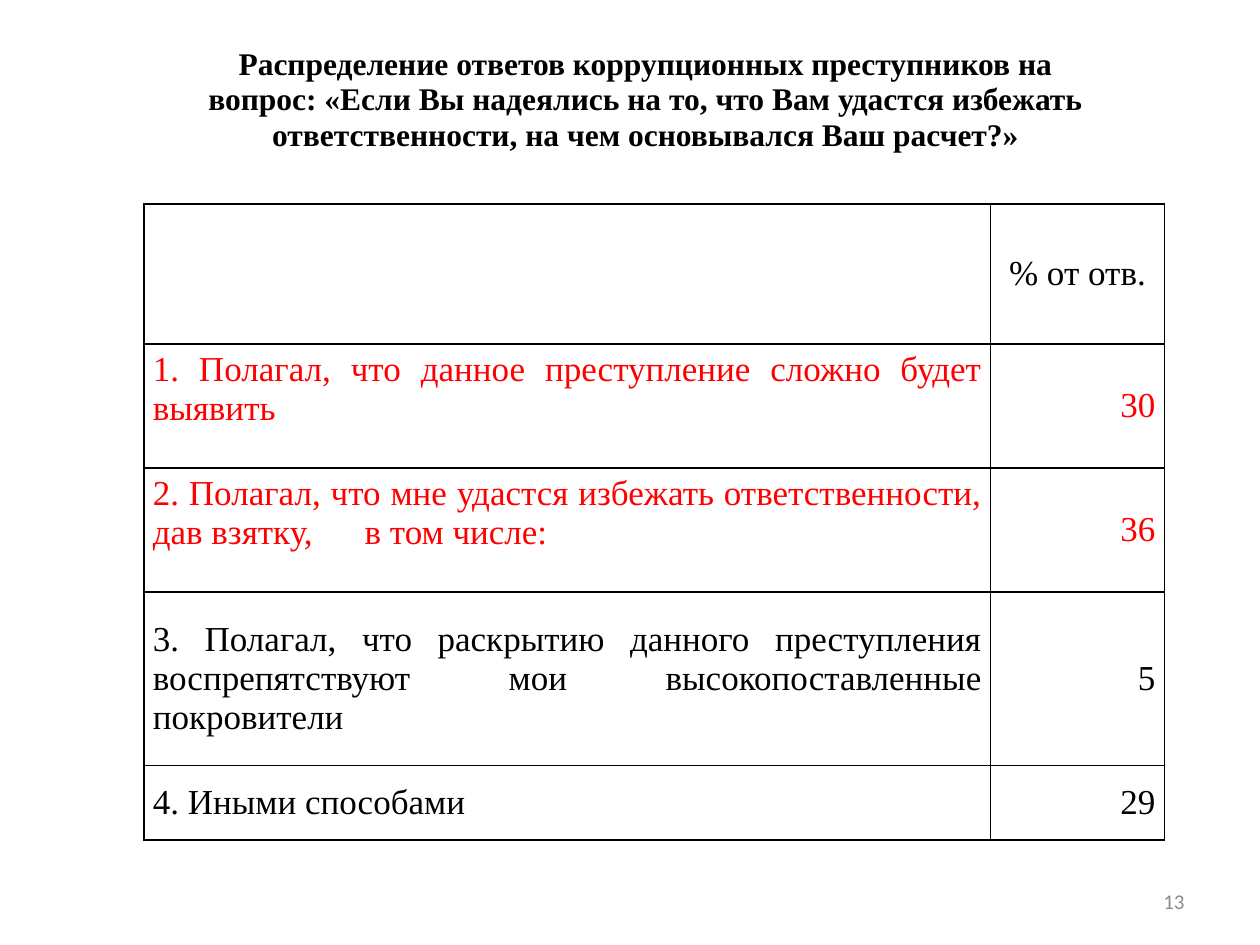
"""Build a slide with a table of survey answers."""
from lxml import etree
from pptx import Presentation
from pptx.dml.color import RGBColor
from pptx.enum.text import MSO_ANCHOR, PP_ALIGN
from pptx.oxml.ns import qn
from pptx.util import Cm, Pt

TOP, MIDDLE = MSO_ANCHOR.TOP, MSO_ANCHOR.MIDDLE
CENTER, RIGHT, JUSTIFY = PP_ALIGN.CENTER, PP_ALIGN.RIGHT, PP_ALIGN.JUSTIFY
BLACK = RGBColor(0, 0, 0)
RED = RGBColor(0xFF, 0, 0)
GRAY = RGBColor(0x8C, 0x8C, 0x8C)
SERIF, SANS = "Times New Roman", "Calibri"

TITLE = (
    "Распределение ответов коррупционных преступников на вопрос: "
    "«Если Вы надеялись на то, что Вам удастся избежать ответственности, "
    "на чем основывался Ваш расчет?»"
)
HEADER = "% от отв."
ANSWERS = [
    ("1. Полагал, что данное преступление сложно будет выявить", "30", RED, TOP, 2.5),
    ("2. Полагал, что мне удастся избежать ответственности, дав взятку,\tв том числе:",
     "36", RED, TOP, 2.5),
    ("3. Полагал, что раскрытию данного преступления воспрепятствуют мои "
     "высокопоставленные покровители", "5", BLACK, MIDDLE, 3.5),
    ("4. Иными способами", "29", BLACK, MIDDLE, 1.5),
]
PAGE_NUMBER = "13"
HEADER_HEIGHT = 2.82
COLUMN_WIDTHS = (17.07, 3.5)
TAB_POSITION = 4.27


def write(paragraph, text, size, color, alignment, name=SERIF, bold=False):
    paragraph.text = text
    paragraph.alignment = alignment
    font = paragraph.font
    font.size, font.name, font.bold = Pt(size), name, bold
    font.color.rgb = color


def add_text(slide, box, *style, **options):
    frame = slide.shapes.add_textbox(*map(Cm, box)).text_frame
    frame.word_wrap = True
    frame.vertical_anchor = MIDDLE
    paragraph = frame.paragraphs[0]
    write(paragraph, *style, **options)
    return paragraph


def add_tab_stop(paragraph, position):
    properties = paragraph._p.get_or_add_pPr()
    tabs = etree.Element(qn("a:tabLst"))
    etree.SubElement(tabs, qn("a:tab"), pos=str(Cm(position)), algn="l")
    properties.insert(0, tabs)


def add_borders(cell):
    properties = cell._tc.get_or_add_tcPr()
    for index, side in enumerate(("lnL", "lnR", "lnT", "lnB")):
        line = etree.Element(qn(f"a:{side}"), w=str(Pt(1)))
        fill = etree.SubElement(line, qn("a:solidFill"))
        etree.SubElement(fill, qn("a:srgbClr"), val=str(BLACK))
        properties.insert(index, line)


def fill_cell(cell, text, color, alignment, anchor):
    cell.fill.background()
    cell.margin_left = cell.margin_right = Cm(0.18)
    cell.margin_top = cell.margin_bottom = Cm(0.13)
    cell.vertical_anchor = anchor
    paragraph = cell.text_frame.paragraphs[0]
    write(paragraph, text, 20, color, alignment)
    if "\t" in text:
        add_tab_stop(paragraph, TAB_POSITION)
    add_borders(cell)


def add_answers(slide):
    heights = [HEADER_HEIGHT] + [answer[-1] for answer in ANSWERS]
    table = slide.shapes.add_table(
        len(heights), len(COLUMN_WIDTHS), Cm(2.9), Cm(4.11),
        Cm(sum(COLUMN_WIDTHS)), Cm(sum(heights))).table
    table.first_row = table.horz_banding = False
    for column, width in zip(table.columns, COLUMN_WIDTHS):
        column.width = Cm(width)
    for row, height in zip(table.rows, heights):
        row.height = Cm(height)
    fill_cell(table.cell(0, 0), "", BLACK, CENTER, MIDDLE)
    fill_cell(table.cell(0, 1), HEADER, BLACK, CENTER, MIDDLE)
    for row, (answer, percent, color, anchor, _) in enumerate(ANSWERS, start=1):
        fill_cell(table.cell(row, 0), answer, color, JUSTIFY, anchor)
        fill_cell(table.cell(row, 1), percent, color, RIGHT, MIDDLE)


def main():
    presentation = Presentation()
    presentation.slide_width, presentation.slide_height = Cm(25.4), Cm(19.05)
    slide = presentation.slides.add_slide(presentation.slide_layouts[6])
    title = add_text(slide, (3.91, 0.33, 18.21, 3.38), TITLE, 18, BLACK, CENTER, bold=True)
    title.line_spacing = 0.95
    add_answers(slide)
    add_text(slide, (18.21, 17.65, 5.92, 1.02), PAGE_NUMBER, 12, GRAY, RIGHT, name=SANS)
    presentation.save("out.pptx")


if __name__ == "__main__":
    main()
